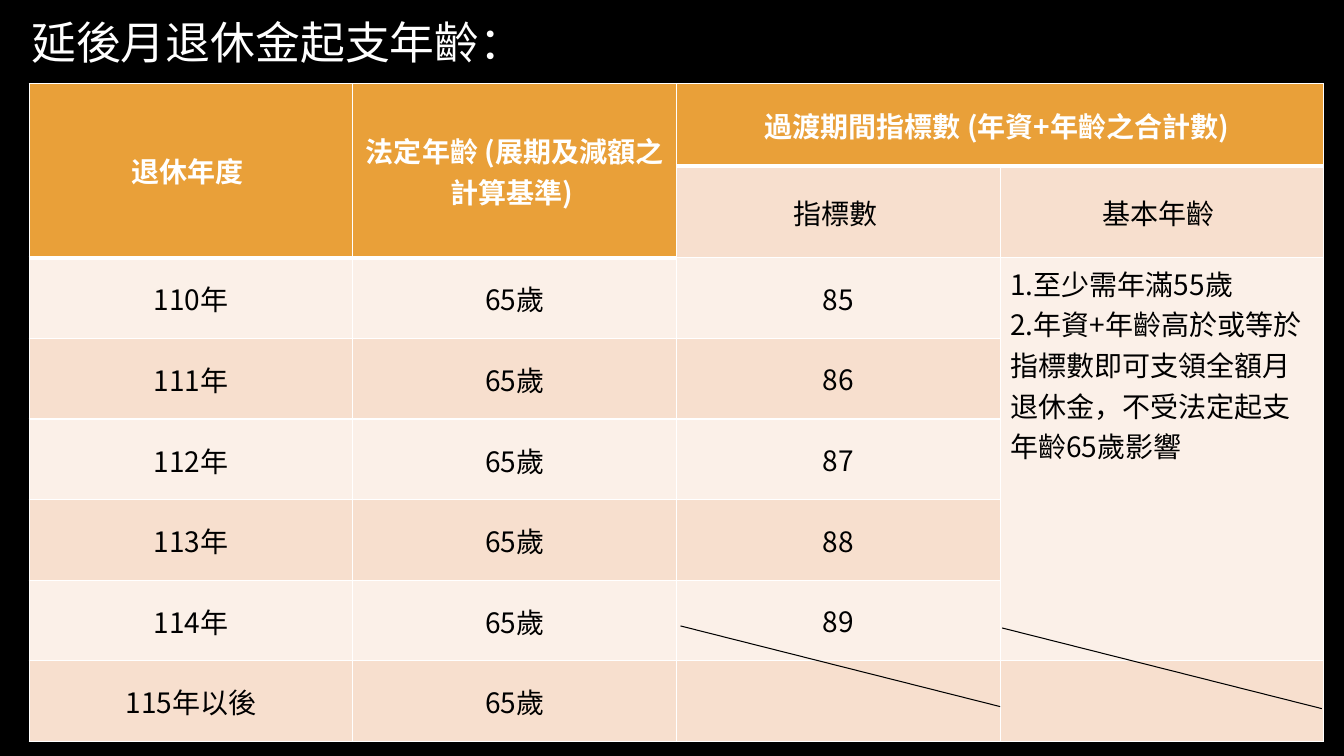
from lxml import etree
from pptx import Presentation
from pptx.dml.color import RGBColor
from pptx.enum.shapes import MSO_CONNECTOR
from pptx.enum.text import MSO_ANCHOR as Anchor, MSO_AUTO_SIZE as AutoSize, PP_ALIGN as Align
from pptx.oxml.ns import qn
from pptx.util import Inches, Pt

FONT = "Noto Sans CJK SC"
ORANGE, PEACH, CREAM = "E9A039", "F7DFCE", "FBF0E8"
BLACK, WHITE = "000000", "FFFFFF"

TITLE = "延後月退休金起支年齡："
YEARS = ["110年", "111年", "112年", "113年", "114年", "115年以後"]
LEGAL_AGE = "65歲"
FIRST_INDEX = 85
AGE_RULES = ["1.至少需年滿55歲",
             "2.年資+年齡高於或等於指標數即可支領全額月退休金，不受法定起支年齡65歲影響"]
HEADER_ROWS = 2
ROW_HEIGHTS = [0.82, 0.58] + [0.8] * len(YEARS)
COLUMN_WIDTH = 3.21

HEADER = {"color": WHITE, "bold": True}
NARROW = {"margin_left": 0.01, "margin_right": 0.01, "margin_top": 0.01, "margin_bottom": 0}


def rgb(value):
    return RGBColor.from_string(value)


def write(frame, lines, size=20, color=BLACK, bold=False, align=Align.CENTER):
    frame.text = "\n".join(lines)
    for para in frame.paragraphs:
        para.alignment = align
        for span in para.runs:
            for name, value in {"size": Pt(size), "bold": bold, "name": FONT}.items():
                setattr(span.font, name, value)
            span.font.color.rgb = rgb(color)
            east_asian = etree.SubElement(span._r.get_or_add_rPr(), qn("a:ea"))
            east_asian.set("typeface", FONT)


def set_borders(cell, bottom):
    """Draw white cell edges, 1 point except for the bottom one."""
    properties = cell._tc.get_or_add_tcPr()
    for tag, width in {"lnL": 1, "lnR": 1, "lnT": 1, "lnB": bottom}.items():
        edge = etree.SubElement(properties, qn(f"a:{tag}"), w=str(Pt(width)))
        fill = etree.SubElement(edge, qn("a:solidFill"))
        etree.SubElement(fill, qn("a:srgbClr"), val=WHITE)


def fill_cell(cell, lines, margins=None, anchor=Anchor.MIDDLE, **text_format):
    cell.vertical_anchor = anchor
    for name, value in (margins or {}).items():
        setattr(cell, name, Inches(value))
    write(cell.text_frame, lines, **text_format)


def add_title(slide, left, top, width, height):
    title = slide.shapes.title
    box = {"left": left, "top": top, "width": width, "height": height}
    for name, value in box.items():
        setattr(title, name, Inches(value))
    frame = title.text_frame
    frame.word_wrap = True
    frame.auto_size = AutoSize.NONE
    frame.vertical_anchor = Anchor.TOP
    write(frame, [TITLE], size=32, color=WHITE, align=Align.LEFT)


def add_pension_table(slide, left, top):
    row_count, column_count = len(ROW_HEIGHTS), 4
    table = slide.shapes.add_table(
        row_count, column_count, Inches(left), Inches(top),
        Inches(COLUMN_WIDTH * column_count), Inches(sum(ROW_HEIGHTS))).table
    table.first_row = table.horz_banding = False
    for column in table.columns:
        column.width = Inches(COLUMN_WIDTH)
    for row, height in zip(table.rows, ROW_HEIGHTS):
        row.height = Inches(height)

    for row in range(row_count):
        for column in range(column_count):
            cell = table.cell(row, column)
            is_header = row == 0 or (row == 1 and column < 2)
            set_borders(cell, bottom=3 if is_header else 1)
            cell.fill.solid()
            color = ORANGE if is_header else PEACH if row % 2 else CREAM
            cell.fill.fore_color.rgb = rgb(color)

    last_index_row = row_count - 2
    for start, end in [((0, 0), (1, 0)), ((0, 1), (1, 1)), ((0, 2), (0, 3)),
                       ((HEADER_ROWS, 3), (last_index_row, 3))]:
        table.cell(*start).merge(table.cell(*end))

    headers = ["退休年度 ", "法定年齡 (展期及減額之計算基準) ", "過渡期間指標數 (年資+年齡之合計數) "]
    for column, text in enumerate(headers):
        fill_cell(table.cell(0, column), [text], **HEADER)
    for column, text in enumerate(["指標數 ", "基本年齡 "], start=2):
        fill_cell(table.cell(1, column), [text])

    for row, year in enumerate(YEARS, start=HEADER_ROWS):
        fill_cell(table.cell(row, 0), [year], NARROW)
        fill_cell(table.cell(row, 1), [LEGAL_AGE], NARROW)
        if row <= last_index_row:
            fill_cell(table.cell(row, 2), [str(FIRST_INDEX + row - HEADER_ROWS)])
    fill_cell(table.cell(HEADER_ROWS, 3), AGE_RULES, anchor=Anchor.TOP, align=Align.LEFT)


def add_strike(slide, left, top, width, height):
    """Cross out an unused cell with a diagonal line."""
    line = slide.shapes.add_connector(
        MSO_CONNECTOR.STRAIGHT, Inches(left), Inches(top),
        Inches(left + width), Inches(top + height))
    line.line.color.rgb = rgb(BLACK)
    line.line.width = Pt(0.75)
    etree.SubElement(line._element.spPr, qn("a:effectLst"))


def build_slide(deck):
    slide = deck.slides.add_slide(deck.slide_layouts[5])
    slide.background.fill.solid()
    slide.background.fill.fore_color.rgb = rgb(BLACK)
    add_title(slide, 0.21, 0.1, 12.74, 1.04)
    add_pension_table(slide, 0.29, 0.83)
    for left, top in [(6.75, 6.21), (9.94, 6.23)]:
        add_strike(slide, left, top, 3.17, 0.8)


def main():
    deck = Presentation()
    deck.slide_width, deck.slide_height = Inches(13.33), Inches(7.5)
    build_slide(deck)
    deck.save("out.pptx")


if __name__ == "__main__":
    main()
